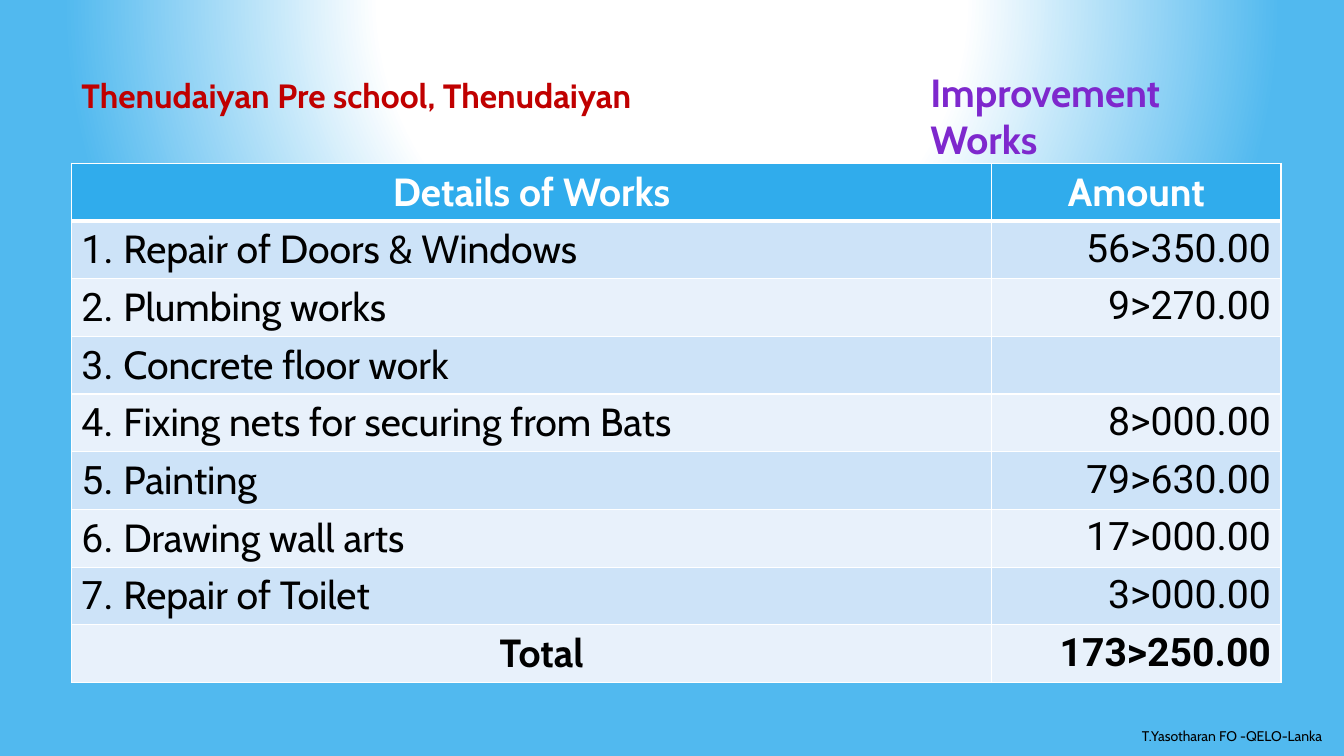
from lxml import etree
from pptx import Presentation
from pptx import util as u
from pptx.dml import color
from pptx.enum import text
from pptx.oxml import parse_xml
from pptx.oxml.ns import nsdecls, qn

LABEL_FONT, NUMBER_FONT = "Cabin", "Roboto"
BLACK, WHITE, SKY = "000000", "FFFFFF", "51B9EF"
HEADER_FILL, BAND_FILLS = "30ACEC", ("CDE3F8", "E8F1FB")
LEFT, CENTER, RIGHT = text.PP_ALIGN.LEFT, text.PP_ALIGN.CENTER, text.PP_ALIGN.RIGHT

WORKS = [
    ("Repair of Doors & Windows", "56>350.00"),
    ("Plumbing works", "9>270.00"),
    ("Concrete floor work", ""),
    ("Fixing nets for securing from Bats", "8>000.00"),
    ("Painting", "79>630.00"),
    ("Drawing wall arts", "17>000.00"),
    ("Repair of Toilet", "3>000.00"),
]
TOTAL = "173>250.00"


def rgb(value):
    return color.RGBColor.from_string(value)


def add_text(paragraph, content, size=28, font=LABEL_FONT, ink=BLACK, bold=False, align=LEFT):
    paragraph.alignment = align
    run = paragraph.add_run()
    run.text = content
    run.font.size = u.Pt(size)
    run.font.name = font
    run.font.bold = bold
    run.font.color.rgb = rgb(ink)


def paint_background(slide):
    """Fill the slide with a circular gradient centred above its top edge."""
    slide.background.fill.gradient()
    gradient = slide.element.find(".//" + qn("a:gradFill"))
    gradient.getparent().replace(gradient, parse_xml(
        f'<a:gradFill {nsdecls("a")} rotWithShape="1"><a:gsLst>'
        f'<a:gs pos="5000"><a:srgbClr val="{WHITE}"/></a:gs>'
        f'<a:gs pos="38000"><a:srgbClr val="{WHITE}"/></a:gs>'
        f'<a:gs pos="79000"><a:srgbClr val="{SKY}"><a:alpha val="94000"/></a:srgbClr></a:gs>'
        '</a:gsLst><a:path path="circle">'
        '<a:fillToRect l="50000" t="-80000" r="50000" b="180000"/>'
        '</a:path></a:gradFill>'))


def place_title(slide, left, top, width, height):
    title = slide.shapes.title
    title.left, title.top, title.width, title.height = map(u.Pt, (left, top, width, height))
    frame = title.text_frame
    frame.word_wrap = True
    frame.auto_size = text.MSO_AUTO_SIZE.NONE
    frame.vertical_anchor = text.MSO_ANCHOR.TOP
    add_text(frame.paragraphs[0], "Thenudaiyan Pre school, Thenudaiyan",
             size=24, ink="C00000", bold=True)


def add_label(slide, box, content, anchor=text.MSO_ANCHOR.TOP, **style):
    frame = slide.shapes.add_textbox(*map(u.Pt, box)).text_frame
    frame.word_wrap = True
    frame.vertical_anchor = anchor
    add_text(frame.paragraphs[0], content, **style)


def set_borders(cell, **widths):
    """Draw white cell borders; widths in points are keyed by side: L, R, T, B."""
    properties = cell._tc.get_or_add_tcPr()
    for position, side in enumerate("LRTB"):
        line = etree.Element(qn(f"a:ln{side}"), w=str(u.Pt(widths.get(side, 1))))
        fill = etree.SubElement(line, qn("a:solidFill"))
        etree.SubElement(fill, qn("a:srgbClr"), val=WHITE)
        properties.insert(position, line)


def add_works_table(slide, left, top, width, height):
    row_count = len(WORKS) + 2
    table = slide.shapes.add_table(
        row_count, 2, *map(u.Pt, (left, top, width, height))).table
    amount_width = 206.64
    table.columns[0].width = u.Pt(width - amount_width)
    table.columns[1].width = u.Pt(amount_width)

    for index, row in enumerate(table.rows):
        row.height = u.Pt(height / row_count)
        for cell in row.cells:
            cell.fill.solid()
            cell.fill.fore_color.rgb = rgb(
                HEADER_FILL if index == 0 else BAND_FILLS[(index - 1) % 2])
            set_borders(cell, T=3 if index == 1 else 1, B=3 if index == 0 else 1)

    def paragraph(row, column):
        return table.cell(row, column).text_frame.paragraphs[0]

    for column, heading in enumerate(("Details of Works", "Amount")):
        add_text(paragraph(0, column), heading, ink=WHITE, bold=True, align=CENTER)
    for number, (work, amount) in enumerate(WORKS, start=1):
        add_text(paragraph(number, 0), f"{number}. ", font=NUMBER_FONT)
        add_text(paragraph(number, 0), work)
        add_text(paragraph(number, 1), amount, font=NUMBER_FONT, align=RIGHT)

    last = row_count - 1
    table.cell(last, 0).margin_left = u.Pt(21.6)
    add_text(paragraph(last, 0), "Total", bold=True, align=CENTER)
    add_text(paragraph(last, 1), TOTAL, font=NUMBER_FONT, bold=True, align=RIGHT)


def main():
    presentation = Presentation()
    presentation.slide_width, presentation.slide_height = u.Pt(960), u.Pt(540)
    slide = presentation.slides.add_slide(presentation.slide_layouts.get_by_name("Title Only"))
    paint_background(slide)
    add_works_table(slide, 51, 116.6, 864, 367.2)
    add_label(slide, (808.6, 511.2, 151.4, 28.8), "T.Yasotharan FO -QELO-Lanka",
              anchor=text.MSO_ANCHOR.MIDDLE, size=10)
    add_label(slide, (657.4, 45.4, 251.3, 41), "Improvement Works", ink="7E28CD", bold=True)
    place_title(slide, 51, 49.7, 412.6, 36)
    presentation.save("out.pptx")


if __name__ == "__main__":
    main()
